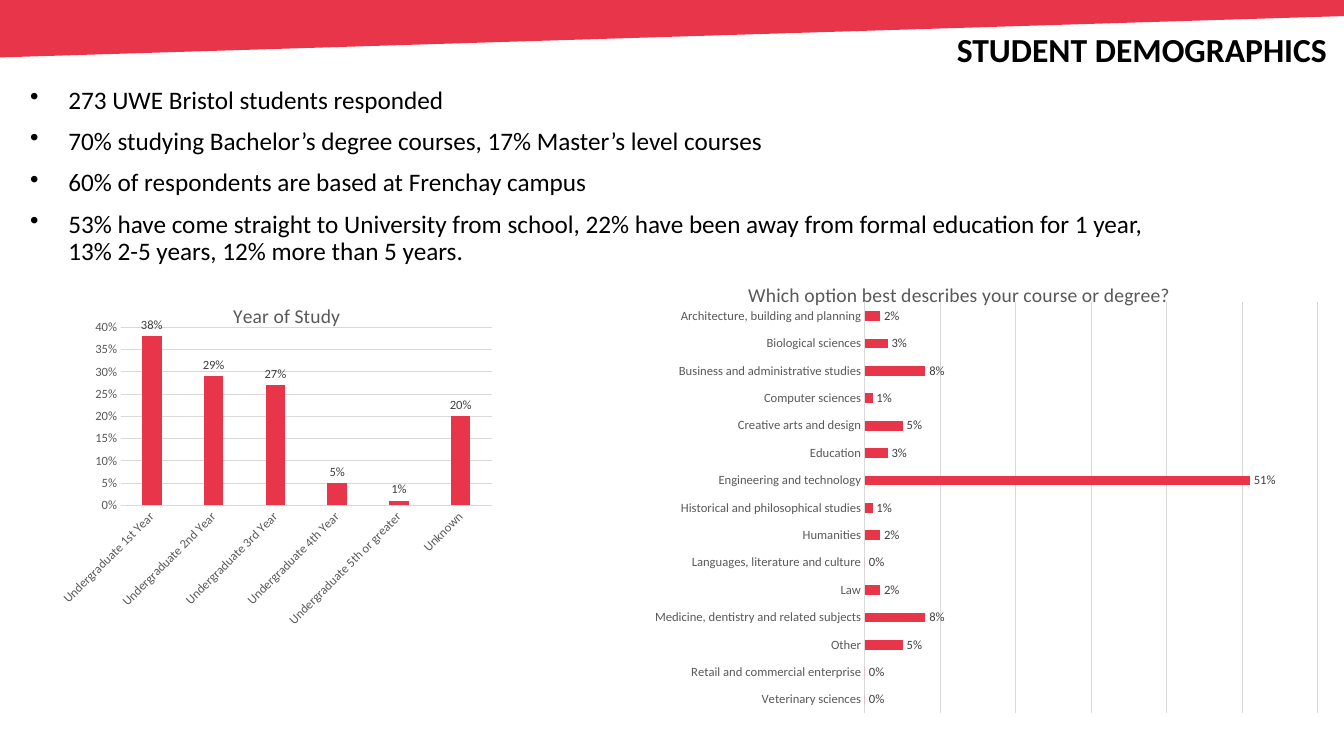
import pptx
import pptx.chart.data
import pptx.dml.color
import pptx.enum.chart
import pptx.enum.text
import pptx.oxml
import pptx.oxml.ns
import pptx.util

Inches = pptx.util.Inches
Pt = pptx.util.Pt
RGBColor = pptx.dml.color.RGBColor
Kind = pptx.enum.chart.XL_CHART_TYPE
qn = pptx.oxml.ns.qn

RED = RGBColor(0xE9, 0x35, 0x4A)
BLACK = RGBColor(0, 0, 0)
DARK = RGBColor(0x40, 0x40, 0x40)
GREY = RGBColor(0x59, 0x59, 0x59)
PALE = RGBColor(0xD9, 0xD9, 0xD9)
FONT = "Calibri"

POINTS = [
    "273 UWE Bristol students responded",
    "70% studying Bachelor’s degree courses, 17% Master’s level courses",
    "60% of respondents are based at Frenchay campus",
    "53% have come straight to University from school, 22% have been away "
    "from formal education for 1 year, 13% 2-5 years, 12% more than 5 years.",
]
YEARS = {
    "Undergraduate 1st Year": 0.38,
    "Undergraduate 2nd Year": 0.29,
    "Undergraduate 3rd Year": 0.27,
    "Undergraduate 4th Year": 0.05,
    "Undergraduate 5th or greater": 0.01,
    "Unknown": 0.2,
}
COURSES = {
    "Architecture, building and planning": 0.02,
    "Biological sciences": 0.03,
    "Business and administrative studies": 0.08,
    "Computer sciences": 0.01,
    "Creative arts and design": 0.05,
    "Education": 0.03,
    "Engineering and technology": 0.51,
    "Historical and philosophical studies": 0.01,
    "Humanities": 0.02,
    "Languages, literature and culture": 0,
    "Law": 0.02,
    "Medicine, dentistry and related subjects": 0.08,
    "Other": 0.05,
    "Retail and commercial enterprise": 0,
    "Veterinary sciences": 0,
}


def style(font, size, color, bold=False):
    font.name = FONT
    font.size = Pt(size)
    font.bold = bold
    font.color.rgb = color


def add_band(slide, left, top, width, height):
    """Slanted red band along the top edge."""
    right = left + width
    pen = slide.shapes.build_freeform(Inches(left), Inches(top), scale=1.0)
    corners = [(left, top + height), (right, top + 0.16), (right, top)]
    pen.add_line_segments([(Inches(x), Inches(y)) for x, y in corners])
    band = pen.convert_to_shape()
    band.shadow.inherit = False
    band.fill.solid()
    band.fill.fore_color.rgb = RED
    band.line.fill.background()


def add_text(slide, box, lines, size, bold=False, bullet=False):
    """Text box with one paragraph per line."""
    frame = slide.shapes.add_textbox(*map(Inches, box)).text_frame
    frame.word_wrap = True
    for i, line in enumerate(lines):
        para = frame.paragraphs[0] if i == 0 else frame.add_paragraph()
        para.line_spacing = 0.9
        if i:
            para.space_before = Pt(10)
        if bullet:
            props = para._p.get_or_add_pPr()
            props.set("marL", str(Inches(0.38)))
            props.set("indent", str(-Inches(0.38)))
            mark = pptx.oxml.parse_xml(
                f'<a:buChar {pptx.oxml.ns.nsdecls("a")} char="•"/>')
            props.append(mark)
        run = para.add_run()
        run.text = line
        style(run.font, size, BLACK, bold)
    return frame


def add_title(slide, box, text):
    frame = add_text(slide, box, [text], 24, bold=True)
    frame.vertical_anchor = pptx.enum.text.MSO_ANCHOR.BOTTOM
    frame.paragraphs[0].alignment = pptx.enum.text.PP_ALIGN.RIGHT


def set_layout(part, index, inner=False, **spots):
    """Fix the place of a chart part, as shares of the chart."""
    for old in part.findall(qn("c:layout")):
        part.remove(old)
    tags = '<c:layoutTarget val="inner"/>' if inner else ""
    tags += "".join(f'<c:{k}Mode val="edge"/>' for k in "xy")
    tags += "".join(f'<c:{k} val="{v}"/>' for k, v in spots.items())
    part.insert(index, pptx.oxml.parse_xml(
        f'<c:layout {pptx.oxml.ns.nsdecls("c")}>'
        f"<c:manualLayout>{tags}</c:manualLayout></c:layout>"))


def add_chart(slide, box, kind, title, spot, plot, table, gap, top, step):
    """Bar or column chart of percentages, without a legend."""
    data = pptx.chart.data.CategoryChartData(number_format="0%")
    data.categories = list(table)
    data.add_series("Series 1", list(table.values()))
    chart = slide.shapes.add_chart(kind, *map(Inches, box), data).chart
    style(chart.font, 10, BLACK)
    chart.has_legend = False

    # Title
    chart.has_title = True
    run = chart.chart_title.text_frame.paragraphs[0].add_run()
    run.text = title
    style(run.font, 14, GREY)
    chart.chart_title.include_in_layout = False
    set_layout(chart.element.xpath("c:chart/c:title")[0], 1,
               x=spot[0], y=spot[1])
    set_layout(chart.element.xpath("c:chart/c:plotArea")[0], 0, inner=True,
               **dict(zip("xywh", plot)))

    # Axes
    cats, vals = chart.category_axis, chart.value_axis
    for axis in (cats, vals):
        axis.major_tick_mark = pptx.enum.chart.XL_TICK_MARK.NONE
        axis.minor_tick_mark = pptx.enum.chart.XL_TICK_MARK.NONE
        style(axis.tick_labels.font, 9, GREY)
    vals.minimum_scale, vals.maximum_scale = 0, top
    vals.major_unit = step
    vals.tick_labels.number_format = "0%"
    vals.tick_labels.number_format_is_linked = False
    vals.format.line.fill.background()
    vals.has_major_gridlines = True
    for line in (cats.format.line, vals.major_gridlines.format.line):
        line.color.rgb = PALE
        line.width = Pt(0.75)

    # Bars and labels
    bars = chart.plots[0]
    bars.gap_width = gap
    bars.vary_by_categories = False
    series = bars.series[0]
    series.invert_if_negative = False
    series.format.fill.solid()
    series.format.fill.fore_color.rgb = RED
    labels = series.data_labels
    labels.show_value = True
    labels.number_format = "0%"
    labels.number_format_is_linked = False
    labels.position = pptx.enum.chart.XL_LABEL_POSITION.OUTSIDE_END
    style(labels.font, 9, DARK)
    return chart


def add_years(slide, box):
    chart = add_chart(slide, box, Kind.COLUMN_CLUSTERED, "Year of Study",
                      (0.38, 0.05), (0.134, 0.132, 0.84, 0.509),
                      YEARS, 219, 0.4, 0.05)
    chart.plots[0].overlap = -27
    body = chart.element.xpath(".//c:catAx/c:txPr/a:bodyPr")[0]
    body.set("rot", "-2700000")
    body.set("vert", "horz")


def add_courses(slide, box):
    chart = add_chart(slide, box, Kind.BAR_CLUSTERED,
                      "Which option best describes your course or degree?",
                      (0.222, 0.042), (0.38, 0.091, 0.595, 0.824),
                      COURSES, 182, 0.6, 0.1)
    chart.category_axis.reverse_order = True
    chart.value_axis.visible = False


def main():
    deck = pptx.Presentation()
    deck.slide_width, deck.slide_height = Inches(13.33), Inches(7.5)
    slide = deck.slides.add_slide(deck.slide_layouts[6])
    add_band(slide, 0, 0, 13.33, 0.57)
    add_title(slide, (9.06, 0.12, 4.2, 0.62), "STUDENT DEMOGRAPHICS")
    add_text(slide, (0.2, 0.82, 11.5, 1.64), POINTS, 18, bullet=True)
    add_years(slide, (0.6, 2.79, 4.39, 3.47))
    add_courses(slide, (5.71, 2.55, 7.55, 4.95))
    deck.save("out.pptx")


if __name__ == "__main__":
    main()
